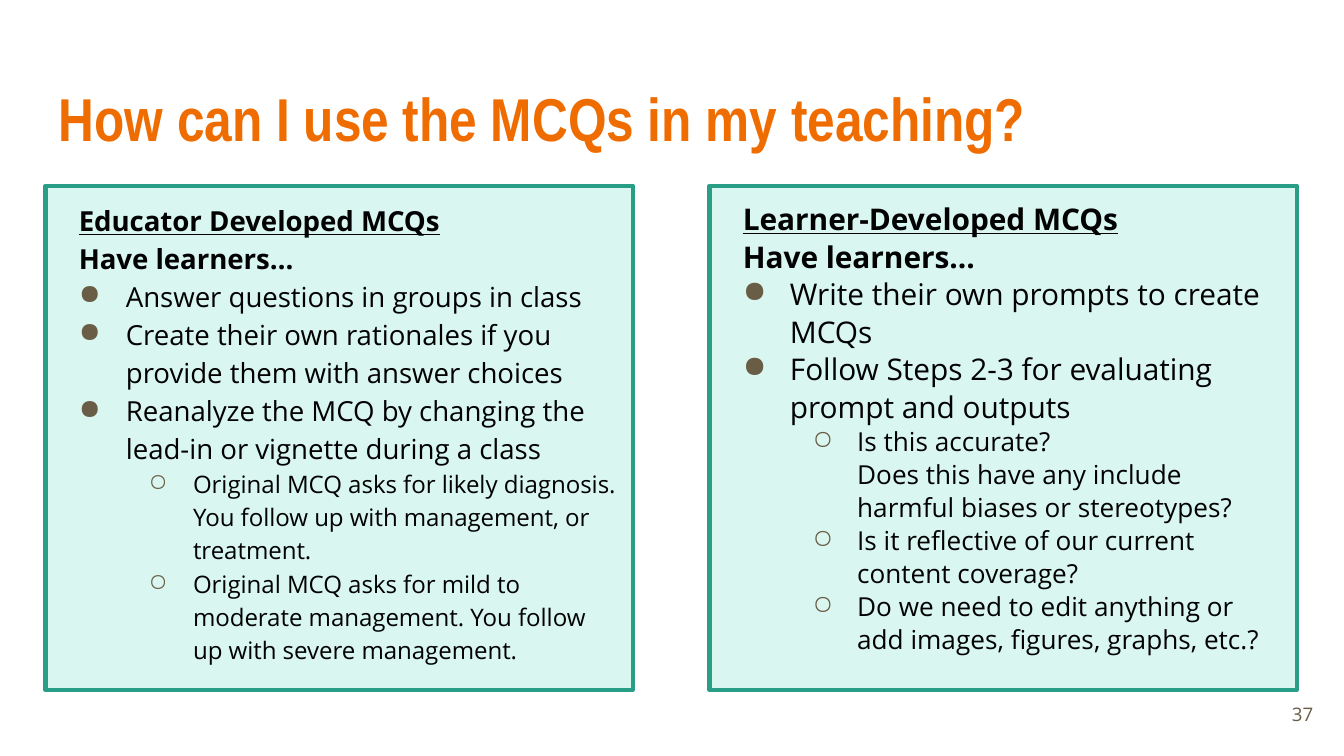
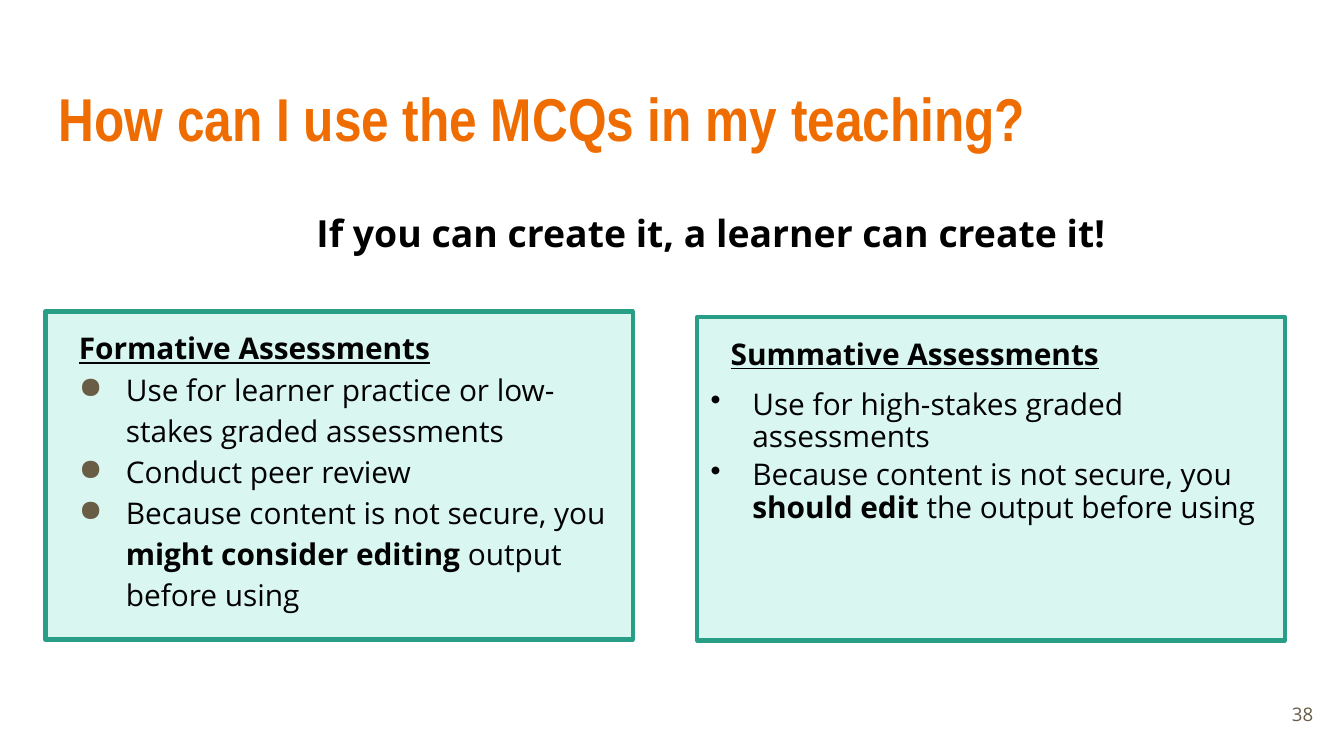
from lxml import etree
from pptx import Presentation
from pptx.dml.color import RGBColor
from pptx.enum.shapes import MSO_SHAPE as SHAPE
from pptx.enum.text import MSO_ANCHOR as ANCHOR, MSO_AUTO_SIZE as AUTO, PP_ALIGN as ALIGN
from pptx.oxml.ns import qn
from pptx.util import Cm, Pt

ORANGE, BROWN, INK, BLACK = "EF6C00", "695D46", "020202", "000000"
MINT, GREEN = "D9F6F0", "279E85"
INSET = Cm(0.25)
FRAME = {"word_wrap": True, "auto_size": AUTO.NONE, "margin_left": INSET,
         "margin_right": INSET, "margin_top": INSET, "margin_bottom": INSET}


def rgb(value):
    return RGBColor.from_string(value)


def write(p, text, color, **font):
    for i, part in enumerate(text.split("*")):
        for j, line in enumerate(part.split("\n")):
            if j:
                p.add_line_break()
            r = p.add_run()
            r.text = line
            r.font.color.rgb = rgb(color)
            values = {"name": "Open Sans", "bold": i % 2 == 1, **font}
            for name, value in values.items():
                setattr(r.font, name, value)


STYLES = {
    "head": {"left": 0.38, "hang": 0, "level": 0},
    "lead": {"left": 0.38, "hang": 0, "level": 0},
    "item": {"left": 1.27, "hang": -0.89, "level": 0, "char": "●", "color": BROWN},
    "sub": {"left": 2.54, "hang": -0.84, "level": 1, "char": "○", "color": BROWN},
    "dot": {"left": 0.79, "hang": -0.79, "level": 1, "char": "•", "color": INK},
}

TITLE = "How can I use the MCQs in my teaching?"
FIRST_NUMBER = 37
PANEL_WIDTH = 11.1
SLIDES = [
    {"panels": [
        {"at": (0.86, 3.51, 9.53), "size": 14.8, "sub_size": 12.9, "spacing": 1.15, "text": [
            ("head", "Educator Developed MCQs"),
            ("lead", "Have learners…"),
            ("item", "Answer questions in groups in class"),
            ("item", "Create their own rationales if you provide them with answer choices"),
            ("item", "Reanalyze the MCQ by changing the lead-in or vignette during a class"),
            ("sub", "Original MCQ asks for likely diagnosis. You follow up with management, "
                    "or treatment."),
            ("sub", "Original MCQ asks for mild to moderate management. You follow up with "
                    "severe management."),
        ]},
        {"at": (13.41, 3.51, 9.53), "size": 16, "sub_size": 14, "spacing": 1.05, "text": [
            ("head", "Learner-Developed MCQs"),
            ("lead", "Have learners…"),
            ("item", "Write their own prompts to create MCQs"),
            ("item", "Follow Steps 2-3 for evaluating prompt and outputs"),
            ("sub", "Is this accurate?\nDoes this have any include harmful biases or stereotypes?"),
            ("sub", "Is it reflective of our current content coverage?"),
            ("sub", "Do we need to edit anything or add images, figures, graphs, etc.?"),
        ]},
    ]},
    {"callout": "If you can create it, a learner can create it!", "panels": [
        {"at": (0.86, 5.89, 6.2), "size": 16, "spacing": 1.15, "text": [
            ("head", "Formative Assessments"),
            ("item", "Use for learner practice or low-stakes graded assessments"),
            ("item", "Conduct peer review"),
            ("item", "Because content is not secure, you *might consider editing* output "
                     "before using"),
        ]},
        {"at": (13.18, 5.99, 6.12), "size": 16, "spacing": 1.15, "text": [
            ("head", "Summative Assessments"),
            ("dot", "Use for high-stakes graded assessments", 9.8),
            ("dot", "Because content is not secure, you *should edit *the output before using",
             3.3),
        ]},
    ]},
]

prs = Presentation()
prs.slide_width, prs.slide_height = Cm(25.4), Cm(14.29)

for number, content in enumerate(SLIDES, FIRST_NUMBER):
    slide = prs.slides.add_slide(prs.slide_layouts[5])
    title = slide.shapes.title
    box = {"left": Cm(0.86), "top": Cm(1.24), "width": Cm(23.67), "height": Cm(1.96)}
    for name, value in box.items():
        setattr(title, name, value)
    tf = title.text_frame
    for name, value in {**FRAME, "vertical_anchor": ANCHOR.MIDDLE}.items():
        setattr(tf, name, value)
    p = tf.paragraphs[0]
    p.alignment = ALIGN.LEFT
    write(p, TITLE, ORANGE, name="Arial Narrow", size=Pt(32.4), bold=True)

    for panel in content["panels"]:
        left, top, height = panel["at"]
        sp = slide.shapes.add_shape(SHAPE.RECTANGLE, Cm(left), Cm(top),
                                    Cm(PANEL_WIDTH), Cm(height))
        sp.shadow.inherit = False
        sp.fill.solid()
        sp.fill.fore_color.rgb = rgb(MINT)
        sp.line.color.rgb = rgb(GREEN)
        sp.line.width = Pt(2.25)
        tf = sp.text_frame
        for name, value in {**FRAME, "vertical_anchor": ANCHOR.TOP}.items():
            setattr(tf, name, value)

        for i, (kind, text, *before) in enumerate(panel["text"]):
            style = STYLES[kind]
            p = tf.add_paragraph() if i else tf.paragraphs[0]
            layout = {"alignment": ALIGN.LEFT, "level": style["level"],
                      "line_spacing": 0.9 if kind == "dot" else panel["spacing"],
                      "space_before": Pt(before[0] if before else 0)}
            for name, value in layout.items():
                setattr(p, name, value)
            pPr = p._p.get_or_add_pPr()
            pPr.set("marL", str(Cm(style["left"])))
            pPr.set("indent", str(Cm(style["hang"])))
            if "char" in style:
                clr = etree.SubElement(pPr, qn("a:buClr"))
                etree.SubElement(clr, qn("a:srgbClr")).set("val", style["color"])
                etree.SubElement(pPr, qn("a:buChar")).set("char", style["char"])
            font = {"size": Pt(panel["sub_size"] if kind == "sub" else panel["size"])}
            if kind in ("head", "lead"):
                font.update(bold=True, underline=kind == "head")
            write(p, text, INK, **font)

    sp = slide.shapes.add_textbox(Cm(23.55), Cm(12.95), Cm(1.52), Cm(1.09))
    tf = sp.text_frame
    for name, value in {**FRAME, "vertical_anchor": ANCHOR.MIDDLE}.items():
        setattr(tf, name, value)
    p = tf.paragraphs[0]
    p.alignment = ALIGN.RIGHT
    write(p, str(number), BROWN, size=Pt(10))

    if "callout" in content:
        sp = slide.shapes.add_textbox(Cm(3.71), Cm(3.84), Cm(19.46), Cm(1.12))
        tf = sp.text_frame
        tf.word_wrap = True
        tf.auto_size = AUTO.SHAPE_TO_FIT_TEXT
        p = tf.paragraphs[0]
        p.alignment = ALIGN.CENTER
        write(p, content["callout"], BLACK, size=Pt(20), bold=True)

prs.save("out.pptx")
